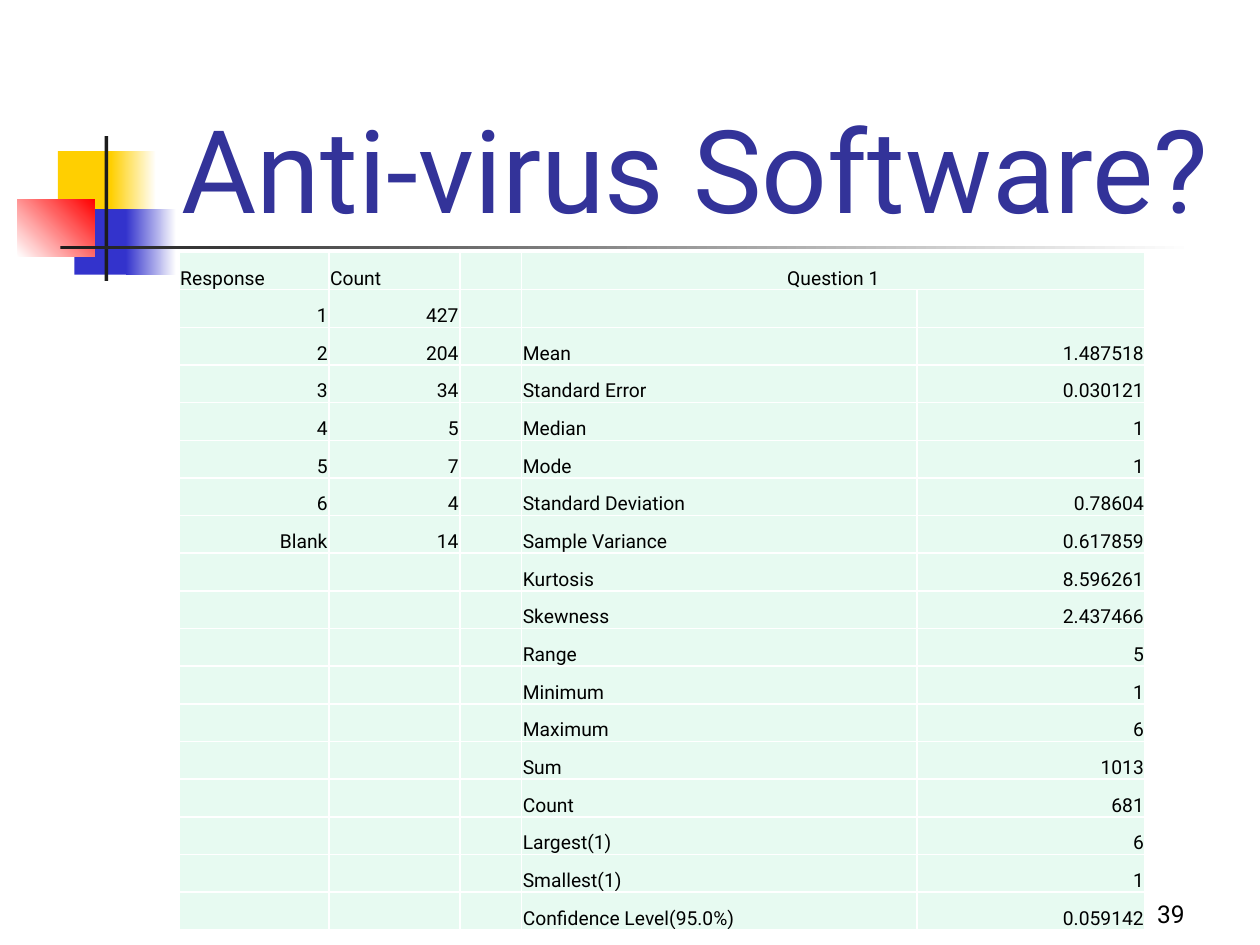
from lxml.etree import SubElement
from pptx import Presentation
from pptx.dml.color import RGBColor
from pptx.enum.shapes import MSO_SHAPE
from pptx.enum.text import MSO_ANCHOR, PP_ALIGN
from pptx.oxml import parse_xml
from pptx.oxml.ns import nsdecls, qn
from pptx.util import Inches, Pt

WHITE = RGBColor(0xFF, 0xFF, 0xFF)
BLACK = RGBColor(0, 0, 0)
YELLOW = RGBColor(0xFF, 0xCF, 0x01)
BLUE = RGBColor(0x33, 0x33, 0xCC)
RED = RGBColor(0xFF, 0, 0)
CHARCOAL = RGBColor(0x1C, 0x1C, 0x1C)
NAVY = RGBColor(0x33, 0x33, 0x99)
MINT = RGBColor(0xE7, 0xFA, 0xF1)
FONT = "Roboto"

COLUMNS = [1.19, 1.04, 0.49, 3.14, 1.81]
TABLE_TOP, TABLE_HEIGHT = 2, 5.38
RESPONSES = [("1", "427"), ("2", "204"), ("3", "34"), ("4", "5"),
             ("5", "7"), ("6", "4"), ("Blank", "14")]
STATISTICS = [
    ("Mean", "1.487518"), ("Standard Error", "0.030121"), ("Median", "1"),
    ("Mode", "1"), ("Standard Deviation", "0.78604"),
    ("Sample Variance", "0.617859"), ("Kurtosis", "8.596261"),
    ("Skewness", "2.437466"), ("Range", "5"), ("Minimum", "1"),
    ("Maximum", "6"), ("Sum", "1013"), ("Count", "681"),
    ("Largest(1)", "6"), ("Smallest(1)", "1"),
    ("Confidence Level(95.0%)", "0.059142"),
]


def write(tf, text, size=11, color=BLACK, align=PP_ALIGN.LEFT):
    p = tf.paragraphs[0]
    p.alignment = align
    if not text:
        SubElement(p._p, qn("a:endParaRPr"), sz=str(size * 100))
        return
    r = p.add_run()
    r.text = text
    r.font.name = FONT
    r.font.size = Pt(size)
    r.font.color.rgb = color


def add_text(s, box, text, **fmt):
    tf = s.shapes.add_textbox(*map(Inches, box)).text_frame
    tf.word_wrap = True
    tf.vertical_anchor = MSO_ANCHOR.BOTTOM
    write(tf, text, **fmt)


def add_block(s, box, color, end=None, angle=0):
    sp = s.shapes.add_shape(MSO_SHAPE.RECTANGLE, *map(Inches, box))
    sp.shadow.inherit = False
    sp.line.fill.background()
    if end is None:
        sp.fill.solid()
        sp.fill.fore_color.rgb = color
        return
    sp.fill.gradient()
    sp.fill.gradient_angle = angle
    for stop, rgb, position in zip(sp.fill.gradient_stops, (color, end), (0, 1)):
        stop.color.rgb = rgb
        stop.position = position


def add_emblem(s):
    add_block(s, (0.46, 1.2, 0.48, 0.52), YELLOW)
    add_block(s, (0.88, 1.2, 0.36, 0.52), YELLOW, WHITE)
    add_block(s, (0.59, 1.66, 0.46, 0.52), BLUE)
    add_block(s, (1, 1.66, 0.4, 0.52), BLUE, WHITE)
    add_block(s, (0.14, 1.58, 0.61, 0.46), WHITE, RED, 45)
    add_block(s, (0.83, 1.08, 0.03, 1.15), CHARCOAL)
    add_block(s, (0.48, 1.95, 9, 0.03), CHARCOAL, WHITE)


def style_cell(cell):
    cell.vertical_anchor = MSO_ANCHOR.BOTTOM
    cell.margin_left = cell.margin_right = cell.margin_top = Inches(0.01)
    cell.margin_bottom = 0
    cell.fill.solid()
    cell.fill.fore_color.rgb = MINT
    tcPr = cell._tc.get_or_add_tcPr()
    for i, side in enumerate("LRTB"):
        tcPr.insert(i, parse_xml(
            f'<a:ln{side} {nsdecls("a")} w="{Pt(1)}"><a:solidFill>'
            f'<a:srgbClr val="{WHITE}"/></a:solidFill></a:ln{side}>'))


def table_rows():
    left = [("Response", "Count")] + RESPONSES
    right = [("Question 1", ""), ("", "")] + STATISTICS
    left += [("", "")] * (len(right) - len(left))
    return [(*a, "", *b) for a, b in zip(left, right)]


def add_results(s):
    rows = table_rows()
    table = s.shapes.add_table(
        len(rows), len(COLUMNS), Inches(1.42), Inches(TABLE_TOP),
        Inches(sum(COLUMNS)), Inches(TABLE_HEIGHT)).table
    for column, width in zip(table.columns, COLUMNS):
        column.width = Inches(width)
    for i, values in enumerate(rows):
        table.rows[i].height = Inches(TABLE_HEIGHT / len(rows))
        for j, text in enumerate(values):
            align = PP_ALIGN.LEFT
            if i == 0 and j == 3:
                align = PP_ALIGN.CENTER
            elif i > 0 and j != 3:
                align = PP_ALIGN.RIGHT
            cell = table.cell(i, j)
            style_cell(cell)
            write(cell.text_frame, text, align=align)
    table.cell(0, 3).merge(table.cell(0, 4))


def main():
    prs = Presentation()
    prs.slide_width, prs.slide_height = Inches(10), Inches(7.5)
    s = prs.slides.add_slide(prs.slide_layouts[6])
    add_emblem(s)
    add_text(s, (1.26, 0.68, 8.52, 1.25), "Anti-virus Software?",
             size=66, color=NAVY, align=PP_ALIGN.CENTER)
    add_text(s, (7.42, 6.92, 2.08, 0.5), "39", size=14, align=PP_ALIGN.RIGHT)
    add_results(s)
    prs.save("out.pptx")


if __name__ == "__main__":
    main()
